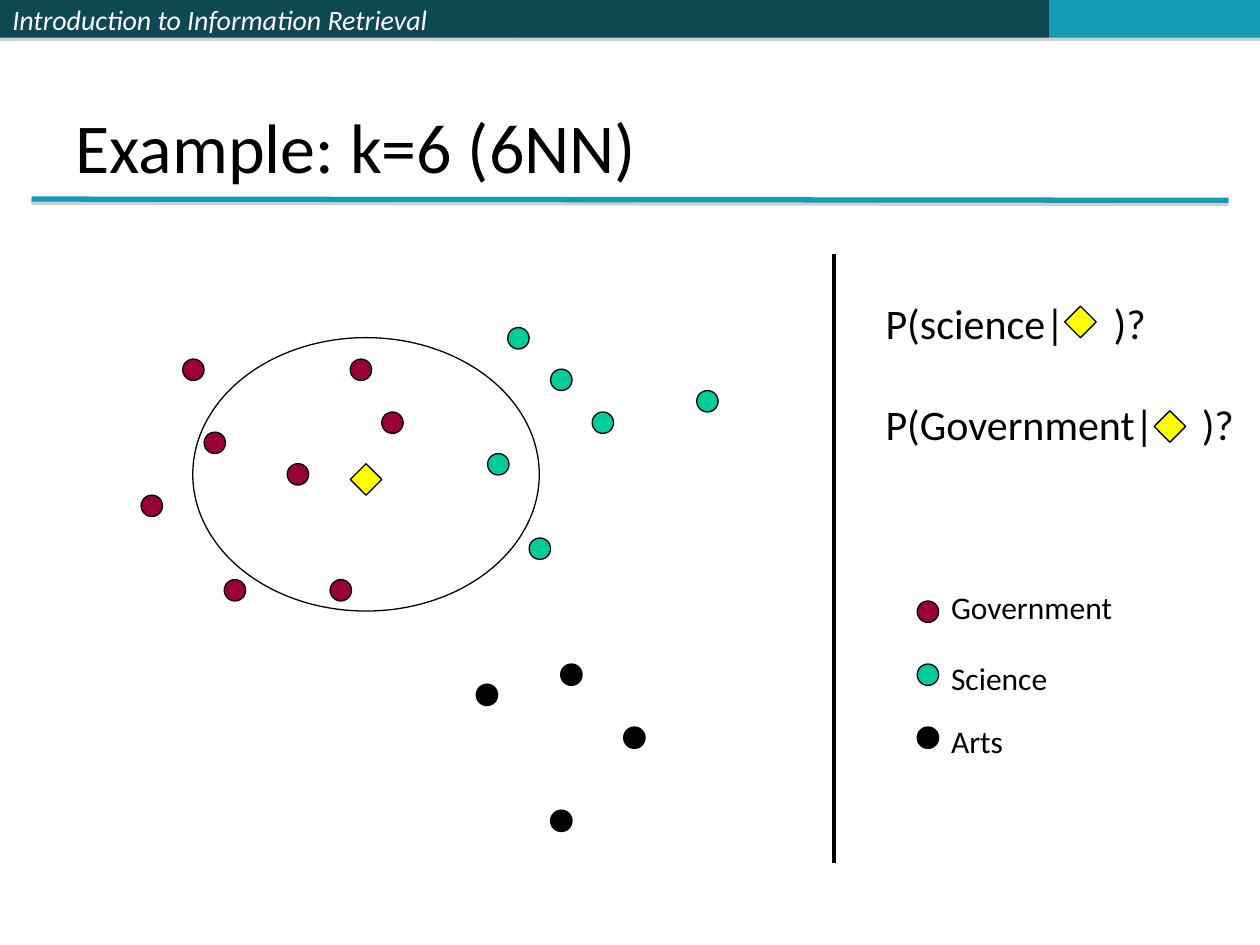
from lxml import etree
from pptx import Presentation
from pptx.dml.color import RGBColor
from pptx.enum.shapes import MSO_CONNECTOR, MSO_SHAPE
from pptx.enum.text import MSO_ANCHOR, MSO_AUTO_SIZE, PP_ALIGN
from pptx.oxml import parse_xml
from pptx.oxml.ns import nsdecls, qn
from pptx.util import Inches, Pt

RECT, OVAL, DIAMOND = MSO_SHAPE.RECTANGLE, MSO_SHAPE.OVAL, MSO_SHAPE.DIAMOND
STRAIGHT = MSO_CONNECTOR.STRAIGHT
MIDDLE, BOTTOM = MSO_ANCHOR.MIDDLE, MSO_ANCHOR.BOTTOM
LEFT = PP_ALIGN.LEFT
NO_AUTOFIT = MSO_AUTO_SIZE.NONE

FONT = "Calibri"
COLORS = {
    "band": "0E4851",
    "accent": "139CB7",
    "Government": "990033",
    "Science": "00CC99",
    "Arts": "000000",
    "query": "FFFF00",
    "ink": "000000",
    "white": "FFFFFF",
}
DOT = 0.17
QUERY = 0.25
SHADOW = (
    f'<a:outerShdw {nsdecls("a")} dist="22860" dir="5400000" rotWithShape="0">'
    '<a:srgbClr val="808080"><a:alpha val="36000"/></a:srgbClr></a:outerShdw>'
)


def add_figure(kind, left, top, width, height, fill=None, outline="ink"):
    figure = slide.shapes.add_shape(
        kind, Inches(left), Inches(top), Inches(width), Inches(height))
    figure.shadow.inherit = False
    if fill:
        figure.fill.solid()
        figure.fill.fore_color.rgb = RGBColor.from_string(COLORS[fill])
    else:
        figure.fill.background()
    if outline:
        figure.line.color.rgb = RGBColor.from_string(COLORS[outline])
        figure.line.width = Pt(0.75)
    else:
        figure.line.fill.background()
    return figure


def format_text(paragraph, size, color="ink", italic=False):
    paragraph.alignment = LEFT
    for run in paragraph.runs:
        run.font.name = FONT
        run.font.size = Pt(size)
        run.font.italic = italic
        run.font.color.rgb = RGBColor.from_string(COLORS[color])


prs = Presentation()
prs.slide_width, prs.slide_height = Inches(10), Inches(7.5)
slide = prs.slides.add_slide(prs.slide_layouts[5])

# Header band
bands = [
    add_figure(RECT, left, 0, width, 0.3, fill, None)
    for left, width, fill in [(0, 4.08, "band"), (4.08, 4.25, "band"), (8.33, 1.67, "accent")]
]
course = bands[0].text_frame
course.text = "Introduction to Information Retrieval"
course.vertical_anchor = MIDDLE
format_text(course.paragraphs[0], 16, "white", italic=True)

# Title rule and vertical divider
rules = []
for x1, y1, x2, y2, color, weight in [
    (0.25, 1.58, 9.75, 1.59, "accent", 3),
    (6.62, 2.02, 6.62, 6.85, "ink", 2.25),
]:
    rule = slide.shapes.add_connector(STRAIGHT, Inches(x1), Inches(y1), Inches(x2), Inches(y2))
    rule.line.color.rgb = RGBColor.from_string(COLORS[color])
    rule.line.width = Pt(weight)
    etree.SubElement(rule._element.spPr, qn("a:effectLst"))
    rules.append(rule)

# Grey shadow under the header and the title rule
for shaded in bands + rules[:1]:
    shaded._element.spPr.find(qn("a:effectLst")).append(parse_xml(SHADOW))

# Title
title = slide.shapes.title
title.left, title.top = Inches(0.5), Inches(0.11)
title.width, title.height = Inches(8.99), Inches(1.43)
title.text_frame.text = "Example: k=6 (6NN)"
title.text_frame.auto_size = NO_AUTOFIT
title.text_frame.vertical_anchor = BOTTOM
format_text(title.text_frame.paragraphs[0], 40)

# Neighbourhood of the query point
add_figure(OVAL, 1.53, 2.68, 2.75, 2.17)

# Documents by class
documents = {
    "Government": [(1.45, 2.85), (1.62, 3.43), (1.78, 4.6), (2.78, 2.85),
                   (1.12, 3.93), (2.28, 3.68), (3.03, 3.27), (2.62, 4.6)],
    "Science": [(3.87, 3.6), (4.03, 2.6), (4.2, 4.27), (4.37, 2.93),
                (5.53, 3.1), (4.7, 3.27)],
    "Arts": [(4.45, 5.27), (3.78, 5.43), (4.37, 6.43), (4.95, 5.77)],
}
for topic, positions in documents.items():
    for left, top in positions:
        add_figure(OVAL, left, top, DOT, DOT, topic)

# Legend
for row, (topic, label_top) in enumerate([("Government", 4.62), ("Science", 5.18), ("Arts", 5.68)]):
    add_figure(OVAL, 7.28, 4.77 + 0.5 * row, DOT, DOT, topic)
    label = slide.shapes.add_textbox(
        Inches(7.45), Inches(label_top), Inches(1.5), Inches(0.4)).text_frame
    label.word_wrap = True
    label.text = topic
    format_text(label.paragraphs[0], 18)

# Probability questions, with a tab stop leaving room for each diamond
questions = slide.shapes.add_textbox(
    Inches(6.93), Inches(2.31), Inches(3.07), Inches(1.72)).text_frame
questions.word_wrap = True
questions.text = "P(science|\t)?\nP(Government|\t)?"
for question, stop in zip(questions.paragraphs, (1.81, 2.51)):
    format_text(question, 24)
    tabs = etree.SubElement(question._p.get_or_add_pPr(), qn("a:tabLst"))
    etree.SubElement(tabs, qn("a:tab"), pos=str(Inches(stop)), algn="l")
questions.paragraphs[1].space_before = Pt(29)

# Query point, in the plot and in both questions
for left, top in [(2.78, 3.68), (8.45, 2.43), (9.16, 3.26)]:
    add_figure(DIAMOND, left, top, QUERY, QUERY, "query")

prs.save("out.pptx")
